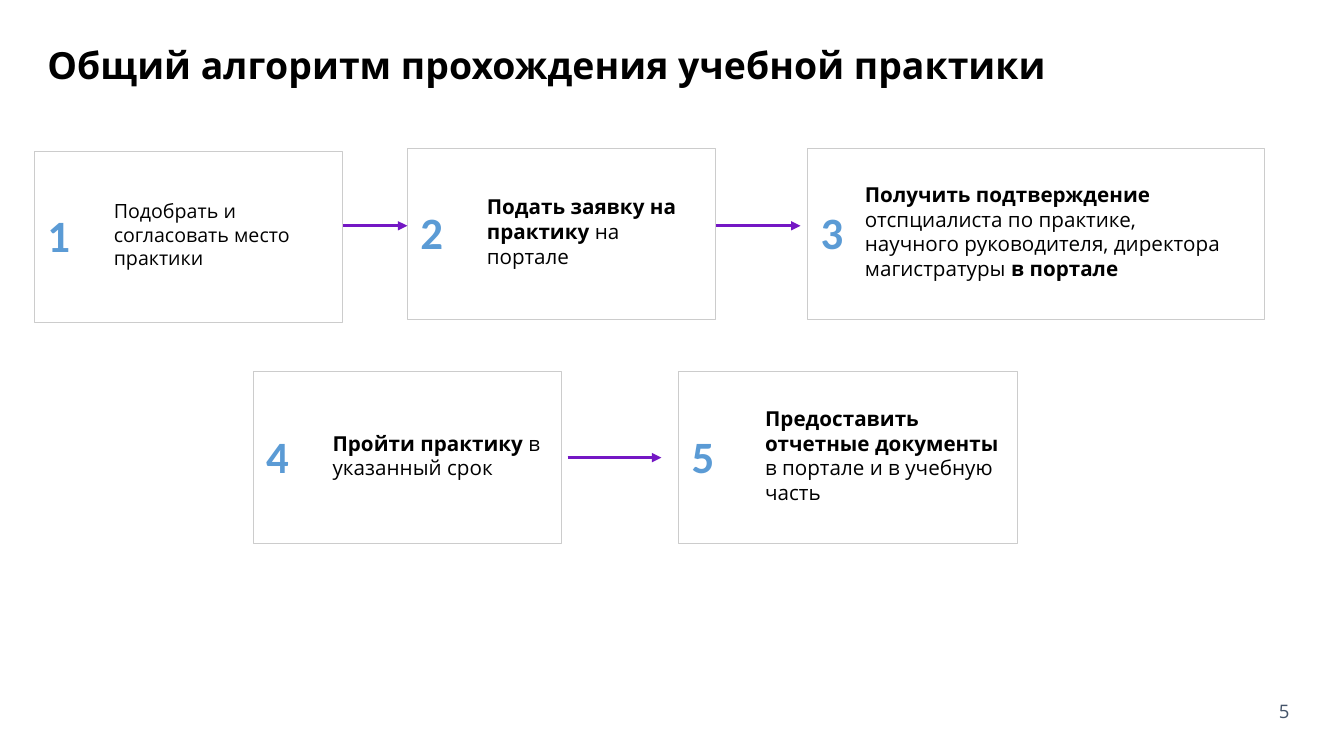
from pptx import Presentation
from pptx.dml.color import RGBColor
from pptx.enum.shapes import MSO_CONNECTOR, MSO_SHAPE
from pptx.enum.text import MSO_ANCHOR, PP_ALIGN
from pptx.oxml.ns import qn
from pptx.util import Inches, Pt
from lxml import etree

STRAIGHT = MSO_CONNECTOR.STRAIGHT
RECTANGLE = MSO_SHAPE.RECTANGLE
TOP, MIDDLE = MSO_ANCHOR.TOP, MSO_ANCHOR.MIDDLE
LEFT, RIGHT = PP_ALIGN.LEFT, PP_ALIGN.RIGHT

COLORS = {
    "card": "FFFFFF",
    "border": "CCCCCC",
    "number": "5B9BD5",
    "text": "000000",
    "arrow": "7417C4",
    "page": "44546A",
}
BODY_FONT, NUMBER_FONT = "Open Sans", "Calibri"
CARD_HEIGHT, TEXT_HEIGHT, TEXT_DROP = 1.7, 1.29, 0.18
WIDE_INSETS = (0.13, 0.13, 0.13, 0.13)
BODY_INSETS = (0.1, 0.05, 0.1, 0.05)

# Card left, top, width; text offset, width, size; runs as (words, bold)
STEPS = [
    (0.34, 1.5, 3.06, 0.69, 2.22, 14,
     [("Подобрать и согласовать место практики", False)]),
    (4.04, 1.47, 3.06, 0.69, 2.29, 14.7,
     [("Подать заявку на практику ", True), ("на портале", False)]),
    (8.01, 1.47, 4.53, 0.47, 3.73, 14.7,
     [("Получить подтверждение", True),
      (" отспциалиста по практике, научного руководителя, "
       "директора магистратуры ", False),
      ("в портале", True)]),
    (2.51, 3.69, 3.06, 0.69, 2.29, 14.7,
     [("Пройти практику", True), (" в указанный срок", False)]),
    (6.73, 3.69, 3.36, 0.76, 2.63, 14.7,
     [("Предоставить отчетные документы ", True),
      ("в портале и в учебную часть", False)]),
]
# Start, end, height on the slide
ARROWS = [(3.4, 4.04, 2.24), (7.1, 7.94, 2.24), (5.63, 6.56, 4.54)]


def rgb(name):
    return RGBColor.from_string(COLORS[name])


def add_text(slide, box, runs, size, color, font=BODY_FONT,
             insets=WIDE_INSETS, anchor=MIDDLE, align=LEFT):
    """Place one paragraph made of (words, bold) runs in the box."""
    frame = slide.shapes.add_textbox(*map(Inches, box)).text_frame
    frame.word_wrap = True
    frame.vertical_anchor = anchor
    (frame.margin_left, frame.margin_top,
     frame.margin_right, frame.margin_bottom) = map(Inches, insets)
    paragraph = frame.paragraphs[0]
    paragraph.alignment = align
    paragraph.font.name = font
    paragraph.font.size = Pt(size)
    paragraph.font.color.rgb = rgb(color)
    for words, bold in runs:
        run = paragraph.add_run()
        run.text = words
        run.font.bold = bold


def add_step(slide, number, left, top, width, offset, text_width, size, runs):
    card = slide.shapes.add_shape(
        RECTANGLE, *map(Inches, (left, top, width, CARD_HEIGHT)))
    card.shadow.inherit = False
    card.fill.solid()
    card.fill.fore_color.rgb = rgb("card")
    card.line.color.rgb = rgb("border")
    card.line.width = Pt(0.75)

    text_top = top + TEXT_DROP
    add_text(slide, (left, text_top, 0.6, TEXT_HEIGHT),
             [(str(number), True)], 32, "number", NUMBER_FONT)
    add_text(slide, (left + offset, text_top, text_width, TEXT_HEIGHT),
             runs, size, "text", insets=BODY_INSETS)


def add_arrow(slide, start, end, y):
    arrow = slide.shapes.add_connector(
        STRAIGHT, *map(Inches, (start, y, end, y)))
    arrow.line.color.rgb = rgb("arrow")
    arrow.line.width = Pt(2.25)
    etree.SubElement(arrow.line._get_or_add_ln(), qn("a:tailEnd"),
                     type="triangle")
    etree.SubElement(arrow._element.spPr, qn("a:effectLst"))


def add_algorithm_slide(prs):
    slide = prs.slides.add_slide(prs.slide_layouts[6])
    add_text(slide, (0.39, 0.29, 12.42, 0.84),
             [("Общий алгоритм прохождения учебной практики", True)],
             26.7, "text", insets=(0.08, 0.13, 0.13, 0.13), anchor=TOP)
    for number, step in enumerate(STEPS, start=1):
        add_step(slide, number, *step)
    for arrow in ARROWS:
        add_arrow(slide, *arrow)
    add_text(slide, (12.12, 6.77, 0.8, 0.57), [("5", False)],
             13.3, "page", align=RIGHT)


def main():
    prs = Presentation()
    prs.slide_width, prs.slide_height = Inches(13.33), Inches(7.5)
    add_algorithm_slide(prs)
    prs.save("out.pptx")


if __name__ == "__main__":
    main()
